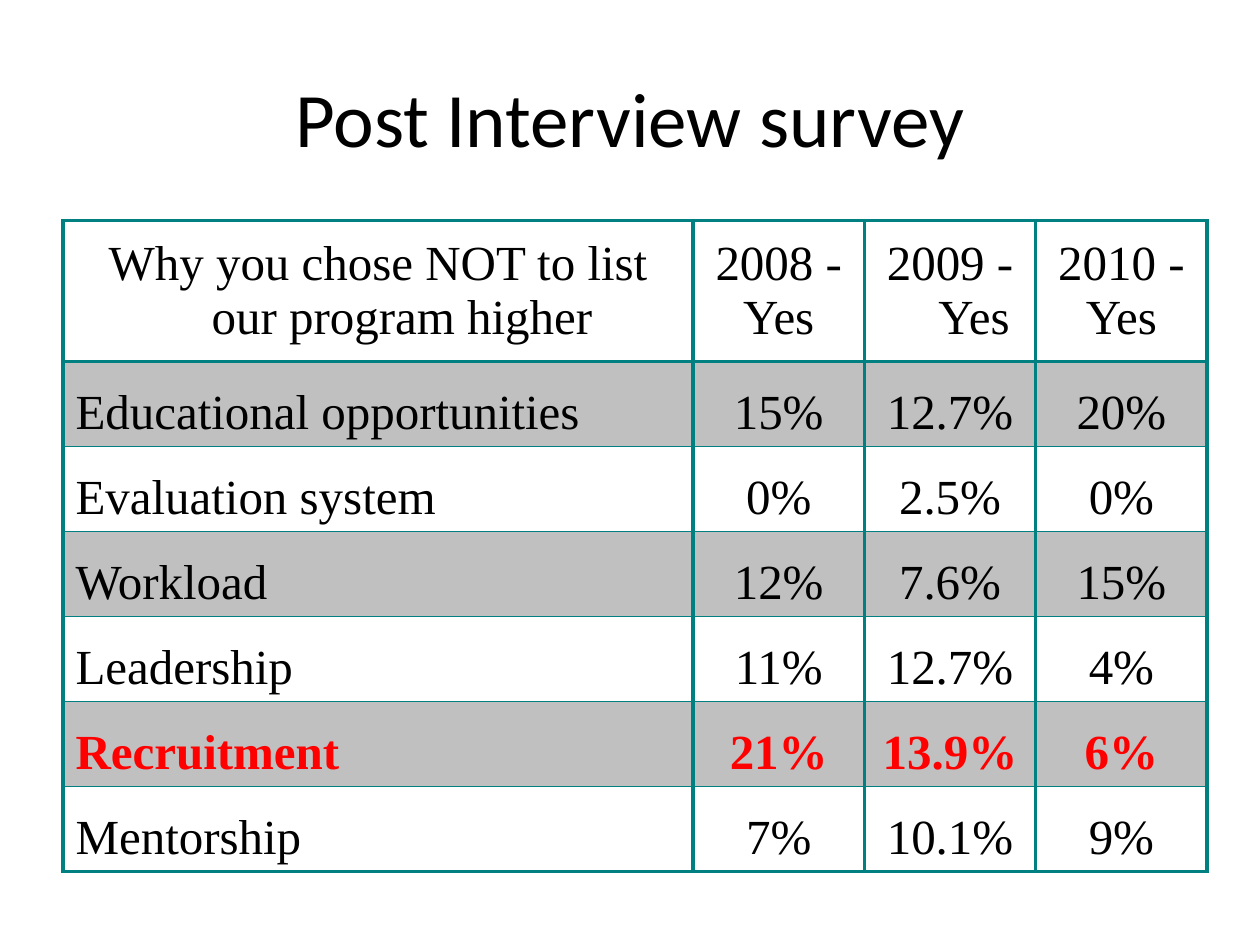
from pptx import Presentation
from pptx.dml.color import RGBColor
from pptx.enum import text
from pptx.oxml import parse_xml
from pptx.oxml import ns
from pptx.util import Inches, Pt

COLORS = {"ink": "000000", "alert": "FF0000", "band": "C0C0C0",
          "plain": "FFFFFF", "rule": "008080"}
HEADER = ["Why you chose NOT to list our program higher",
          "2008 - Yes", "2009 - Yes", "2010 - Yes"]
REASONS = [
    ["Educational opportunities", "15%", "12.7%", "20%"],
    ["Evaluation system", "0%", "2.5%", "0%"],
    ["Workload", "12%", "7.6%", "15%"],
    ["Leadership", "11%", "12.7%", "4%"],
    ["Recruitment", "21%", "13.9%", "6%"],
    ["Mentorship", "7%", "10.1%", "9%"],
]
HIGHLIGHT = "Recruitment"
UNINDENTED = ("2008 - Yes", "2010 - Yes")


def style_text(para, font, size, color, bold=False):
    """Format every run of a paragraph."""
    for span in para.runs:
        span.font.name = font
        span.font.size = Pt(size)
        span.font.bold = bold
        span.font.color.rgb = RGBColor.from_string(COLORS[color])


def set_borders(cell, top, bottom):
    """Rule a cell with thick sides and the given top and bottom widths."""
    props = cell._tc.get_or_add_tcPr()
    widths = {"lnL": 2, "lnR": 2, "lnT": top, "lnB": bottom}
    for index, (side, width) in enumerate(widths.items()):
        props.insert(index, parse_xml(
            f'<a:{side} {ns.nsdecls("a")} w="{Pt(width)}"><a:solidFill>'
            f'<a:srgbClr val="{COLORS["rule"]}"/></a:solidFill></a:{side}>'))


def fill_cell(cell, wording, row, column, bold):
    """Write one table cell with its fill, alignment and hanging indent."""
    header = row == 0
    cell.text = wording
    cell.fill.solid()
    cell.fill.fore_color.rgb = RGBColor.from_string(
        COLORS["band" if row % 2 else "plain"])
    cell.vertical_anchor = (text.MSO_ANCHOR.MIDDLE if header
                            else text.MSO_ANCHOR.BOTTOM)
    para = cell.text_frame.paragraphs[0]
    para.alignment = (text.PP_ALIGN.CENTER if header or column
                      else text.PP_ALIGN.LEFT)
    if wording not in UNINDENTED:
        indent = para._p.get_or_add_pPr()
        indent.set("marL", str(Inches(0.38)))
        indent.set("indent", str(Inches(-0.38)))
    style_text(para, "Times New Roman", 28, "alert" if bold else "ink", bold)
    set_borders(cell, 2 if row < 2 else 1,
                2 if row in (0, len(REASONS)) else 1)


def add_title(page, left, top, width, height):
    """Place the centred slide title in its box."""
    box = page.shapes.add_textbox(left, top, width, height)
    frame = box.text_frame
    frame.text = "Post Interview survey"
    frame.word_wrap = True
    frame.vertical_anchor = text.MSO_ANCHOR.MIDDLE
    para = frame.paragraphs[0]
    para.alignment = text.PP_ALIGN.CENTER
    style_text(para, "Calibri", 44, "ink")


def add_survey_table(page, left, top, width, height):
    """Place the survey table, with equal year columns and reason rows."""
    rows = [HEADER] + REASONS
    table = page.shapes.add_table(len(rows), len(HEADER), left, top,
                                  width, height).table
    table.first_row = table.horz_banding = False
    year_width, header_height = Inches(1.36), Inches(1.12)
    for column in table.columns:
        column.width = year_width
    table.columns[0].width = width - year_width * (len(HEADER) - 1)
    for line in table.rows:
        line.height = (height - header_height) // len(REASONS)
    table.rows[0].height = header_height
    for row, wordings in enumerate(rows):
        for column, wording in enumerate(wordings):
            fill_cell(table.cell(row, column), wording, row, column,
                      wordings[0] == HIGHLIGHT)


def main():
    """Build and save the deck."""
    deck = Presentation()
    deck.slide_width, deck.slide_height = Inches(10), Inches(7.5)
    page = deck.slides.add_slide(deck.slide_layouts[6])
    add_title(page, Inches(0.5), Inches(0.3), Inches(9), Inches(1.25))
    add_survey_table(page, Inches(0.5), Inches(1.75), Inches(9.08), Inches(5.17))
    deck.save("out.pptx")


if __name__ == "__main__":
    main()
